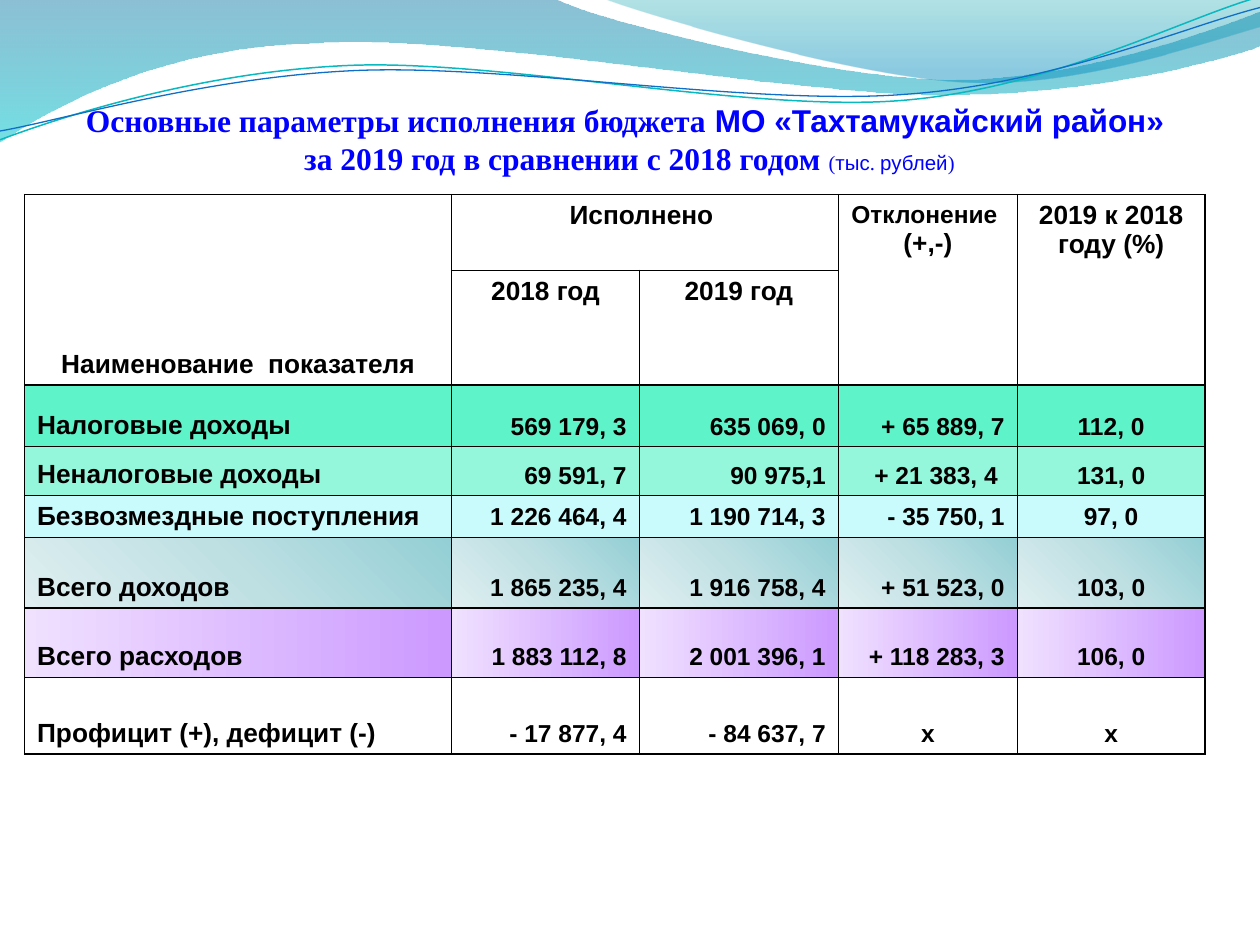
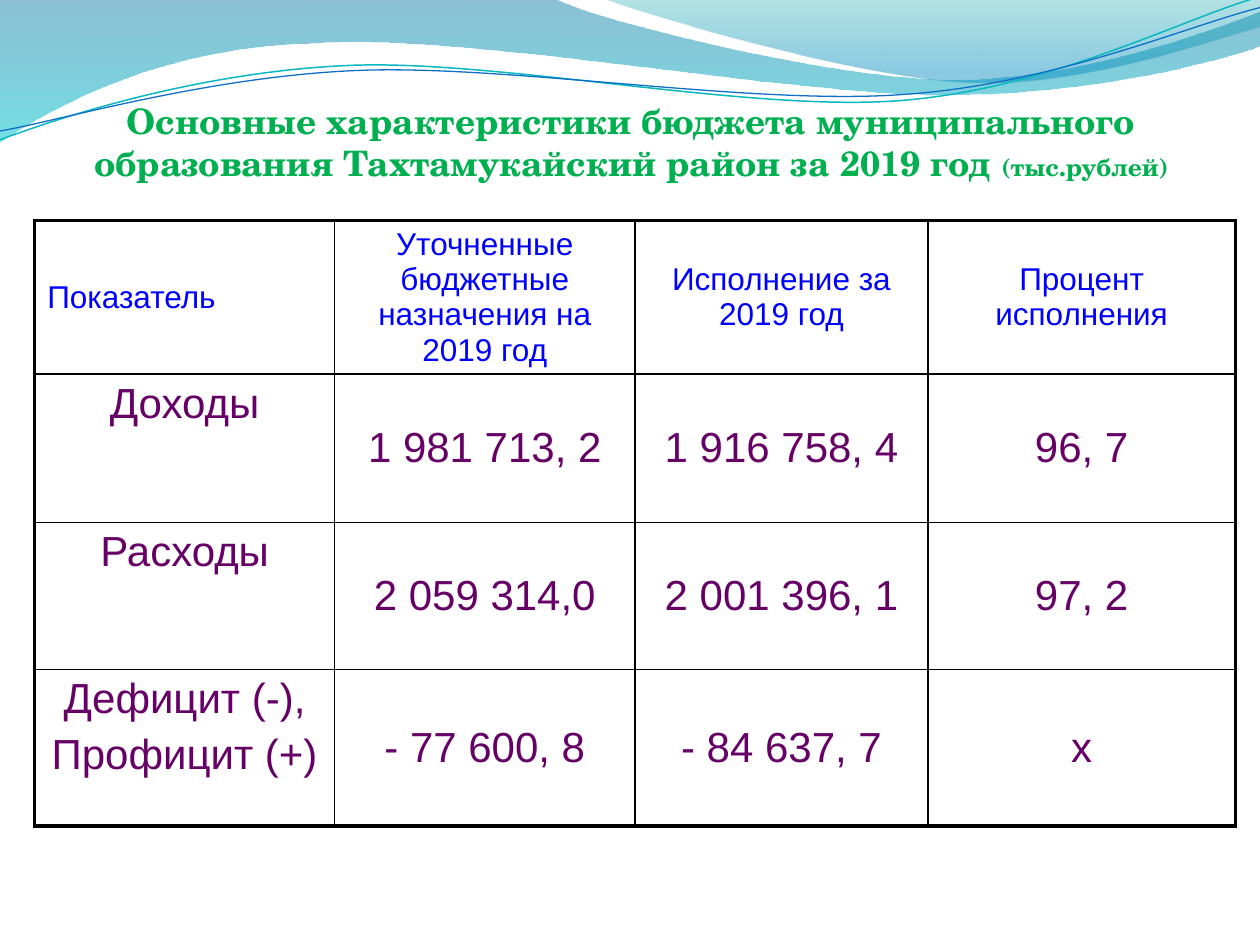
from lxml import etree
from pptx import Presentation
from pptx.dml.color import RGBColor
from pptx.enum.text import MSO_ANCHOR, MSO_AUTO_SIZE, PP_ALIGN
from pptx.oxml.ns import qn
from pptx.util import Inches, Pt

LEFT, CENTER, RIGHT = PP_ALIGN.LEFT, PP_ALIGN.CENTER, PP_ALIGN.RIGHT
TOP, MIDDLE, BOTTOM = MSO_ANCHOR.TOP, MSO_ANCHOR.MIDDLE, MSO_ANCHOR.BOTTOM
NO_AUTO_SIZE = MSO_AUTO_SIZE.NONE

BLACK = RGBColor(0x00, 0x00, 0x00)
BLUE = RGBColor(0x00, 0x00, 0xFF)
GREEN = RGBColor(0x00, 0xB0, 0x50)
PURPLE = RGBColor(0x66, 0x00, 0x66)
DEEP_BLUE = RGBColor(0x00, 0x74, 0xA1)
CYAN = RGBColor(0x00, 0xC6, 0xCF)
TEAL = RGBColor(0x00, 0xA1, 0xA9)
SEA_BLUE = RGBColor(0x00, 0x8B, 0xBF)
TEAL_LINE = RGBColor(0x0A, 0xB8, 0xBF)
BLUE_LINE = RGBColor(0x0F, 0x6F, 0xC6)
MINT = RGBColor(0x5F, 0xF3, 0xCA)
LIGHT_MINT = RGBColor(0x94, 0xF7, 0xDC)
ICE = RGBColor(0xC9, 0xFA, 0xFC)
GREY_TEAL = RGBColor(0x93, 0xCF, 0xD5)
PALE_TEAL = RGBColor(0xBF, 0xE0, 0xE3)
MIST = RGBColor(0xE0, 0xEF, 0xF1)
PALE_LILAC = RGBColor(0xF0, 0xE1, 0xFF)
LILAC = RGBColor(0xCC, 0x99, 0xFF)

SANS, SERIF, SCHOOL = "Arial", "Times New Roman", "TeX Gyre Schola"
GRID_COLUMNS, GRID_ROWS = 100, 75

# Each wave is a start point and segments in grid units:
# one point for a straight line, two controls and an end for a curve.
BAND_START = (0, 0)
BAND_SEGMENTS = [((44, -0.1),),
                 ((47.6, 1.7), (66.4, 6.3), (75.8, 6.3)),
                 ((85.3, 6.3), (95.8, 2.6), (100, 0.9)),
                 ((100.1, 3.6),),
                 ((98.3, 4.4), (87, 7.6), (74.6, 7.5)),
                 ((62.2, 7.5), (38.2, 2.8), (25.7, 3.4)),
                 ((12.9, 3.6), (4.6, 8.3), (-0.1, 11.3))]
CORNER_START = (47.9, -0.1)
CORNER_SEGMENTS = [((50.9, 1.1), (68.2, 6.2), (76.9, 6.5)),
                   ((85.6, 6.9), (96.1, 3.2), (100, 2.1)),
                   ((100, 0),)]
TEAL_START = (0, 11.1)
TEAL_SEGMENTS = [((4.8, 9.3), (15.8, 5.7), (27.7, 5.2)),
                 ((39.5, 4.7), (59.3, 8.9), (71.3, 8)),
                 ((83.3, 7.1), (93.8, 1.5), (99.8, -0.2))]
BLUE_START = (0, 10.4)
BLUE_SEGMENTS = [((4.7, 9.6), (16.4, 6.1), (28.3, 5.6)),
                 ((40.3, 5.1), (59.7, 8.4), (71.7, 7.5)),
                 ((83.6, 6.7), (94.1, 2.1), (100, 0.6))]


def bend_lines(shape, segments):
    """Turn the three straight lines that stand for a curve into that curve."""
    lines = iter(list(shape._element.iter(qn("a:lnTo"))))
    for segment in segments:
        group = [next(lines) for _ in segment]
        if len(group) == 3:
            curve = etree.Element(qn("a:cubicBezTo"))
            group[0].addprevious(curve)
            for line in group:
                curve.append(line[0])
                line.getparent().remove(line)


def gradient(stops, angle=None):
    """Build a gradFill; without an angle it spreads from the top right corner."""
    element = etree.Element(qn("a:gradFill"), rotWithShape="1")
    stop_list = etree.SubElement(element, qn("a:gsLst"))
    for position, color, opacity in stops:
        stop = etree.SubElement(stop_list, qn("a:gs"), pos=str(position * 1000))
        value = etree.SubElement(stop, qn("a:srgbClr"), val=str(color))
        if opacity < 100:
            etree.SubElement(value, qn("a:alpha"), val=str(opacity * 1000))
    if angle is None:
        spread = etree.SubElement(element, qn("a:path"), {"path": "circle"})
        etree.SubElement(spread, qn("a:fillToRect"), l="100000", b="100000")
    else:
        etree.SubElement(element, qn("a:lin"), ang=str(angle * 60000), scaled="0")
    return element


def apply_fill(fill, properties, paint):
    """Fill with nothing, a colour or a tuple of gradient arguments."""
    fill.background()
    if isinstance(paint, RGBColor):
        fill.solid()
        fill.fore_color.rgb = paint
    elif paint:
        properties.replace(properties.find(qn("a:noFill")), gradient(*paint))


def write_text(frame, paragraphs, *, size=14, font=SANS, color=BLACK, bold=False,
               align=LEFT, space_before=0):
    """Write paragraphs; each is a string or a list of (text, overrides) runs."""
    for index, content in enumerate(paragraphs):
        paragraph = frame.add_paragraph() if index else frame.paragraphs[0]
        paragraph.alignment = align
        paragraph.space_before = Pt(space_before)
        for text, changes in [(content, {})] if isinstance(content, str) else content:
            if text == "\n":
                paragraph.add_line_break()
                continue
            run = paragraph.add_run()
            run.text = text
            run.font.size = Pt(changes.get("size", size))
            run.font.name = changes.get("font", font)
            run.font.bold = changes.get("bold", bold)
            run.font.color.rgb = color


def set_borders(cell, widths):
    properties = cell._tc.get_or_add_tcPr()
    for index, (side, width) in enumerate(zip("LRTB", widths)):
        line = etree.Element(qn(f"a:ln{side}"), w=str(Pt(width)))
        solid = etree.SubElement(line, qn("a:solidFill"))
        etree.SubElement(solid, qn("a:srgbClr"), val=str(BLACK))
        properties.insert(index, line)


class Deck:
    """Holds the shared style and the current slide."""

    def __init__(self):
        self.presentation = Presentation()
        self.presentation.slide_width = Inches(10)
        self.presentation.slide_height = Inches(7.5)
        self.layout = self.presentation.slide_layouts[5]
        self.slide = None

    def across(self, columns):
        return round(self.presentation.slide_width * columns / GRID_COLUMNS)

    def down(self, rows):
        return round(self.presentation.slide_height * rows / GRID_ROWS)

    def box(self, left, top, width, height):
        return self.across(left), self.down(top), self.across(width), self.down(height)

    def add_slide(self):
        self.slide = self.presentation.slides.add_slide(self.layout)

    def wave(self, start, segments, paint=None, line=None, width=0):
        """Draw a wave on the slide, filled if it has paint, and return it."""
        builder = self.slide.shapes.build_freeform(self.across(start[0]), self.down(start[1]))
        builder.add_line_segments([(self.across(x), self.down(y))
                                   for segment in segments for x, y in segment],
                                  close=paint is not None)
        shape = builder.convert_to_shape()
        bend_lines(shape, segments)
        shape.shadow.inherit = False
        apply_fill(shape.fill, shape._element.spPr, paint)
        if line:
            shape.line.color.rgb = line
            shape.line.width = Pt(width)
        else:
            shape.line.fill.background()
        return shape

    def share_waves(self):
        """Draw the waves once and hand them to the layout."""
        waves = [
            self.wave(BAND_START, BAND_SEGMENTS,
                      ([(0, DEEP_BLUE, 45), (100, CYAN, 55)], 90)),
            self.wave(CORNER_START, CORNER_SEGMENTS,
                      ([(0, TEAL, 30), (80, SEA_BLUE, 45)], 90)),
            self.wave(TEAL_START, TEAL_SEGMENTS, line=TEAL_LINE, width=0.85),
            self.wave(BLUE_START, BLUE_SEGMENTS, line=BLUE_LINE, width=0.75),
        ]
        for number, shape in enumerate(waves, start=101):
            shape._element.nvSpPr.cNvPr.set("id", str(number))
            self.layout.shapes._spTree.append(shape._element)

    def title(self, place, runs, bottom_inset=0, **style):
        shape = self.slide.shapes.title
        shape.left, shape.top, shape.width, shape.height = self.box(*place)
        frame = shape.text_frame
        frame.word_wrap = True
        frame.auto_size = NO_AUTO_SIZE
        frame.vertical_anchor = BOTTOM
        frame.margin_left = frame.margin_right = 0
        frame.margin_top, frame.margin_bottom = Inches(0.05), self.down(bottom_inset)
        write_text(frame, [runs], bold=True, align=CENTER, **style)

    def table(self, left, top, columns, rows, outline=1):
        shape = self.slide.shapes.add_table(
            len(rows), len(columns), *self.box(left, top, sum(columns), sum(rows)))
        table = shape.table
        table.first_row = table.horz_banding = False
        for column, width in zip(table.columns, columns):
            column.width = self.across(width)
        for row, height in zip(table.rows, rows):
            row.height = self.down(height)
        last_row, last_column = len(rows) - 1, len(columns) - 1
        for r in range(len(rows)):
            for c in range(len(columns)):
                cell = table.cell(r, c)
                cell.fill.background()
                edges = (c == 0, c == last_column, r == 0, r == last_row)
                set_borders(cell, [outline if edge else 1 for edge in edges])
        return table

    def cell(self, table, row, column, paragraphs, anchor=TOP, paint=None, **style):
        cell = table.cell(row, column)
        cell.vertical_anchor = anchor
        apply_fill(cell.fill, cell._tc.get_or_add_tcPr(), paint)
        write_text(cell.text_frame, paragraphs, **style)


def add_comparison(deck):
    small = {"size": 11.7, "bold": False}
    deck.title((4.2, 7.6, 91.5, 8.5), [
        ("Основные параметры исполнения бюджета", {}),
        (" МО «Тахтамукайский район» ", {"font": SANS}),
        ("\n", {}),
        ("за 2019 год в сравнении с 2018 годом ", {}),
        ("(", small), ("тыс", {**small, "font": SANS}), (". ", small),
        ("рублей", {**small, "font": SANS}), (")", small),
    ], bottom_inset=2.05, size=18, font=SERIF, color=BLUE)

    table = deck.table(1.95, 15.45, [33.9, 14.9, 15.8, 14.2, 14.9],
                       [6, 9.1, 4.9, 3.9, 2.8, 5.6, 5.5, 6.1])
    for column in (0, 3, 4):
        table.cell(0, column).merge(table.cell(1, column))
    table.cell(0, 1).merge(table.cell(0, 2))
    headings = [(0, 0, ["Наименование  показателя"], BOTTOM),
                (0, 1, ["Исполнено "], TOP),
                (0, 3, [[("Отклонение ", {"size": 14})], "(+,-)"], TOP),
                (0, 4, ["2019 к 2018 году (%)"], TOP),
                (1, 1, ["2018 год"], TOP),
                (1, 2, ["2019 год"], TOP)]
    for row, column, paragraphs, anchor in headings:
        deck.cell(table, row, column, paragraphs, anchor, size=15, bold=True, align=CENTER)

    income_total = ([(0, GREY_TEAL, 100), (50, PALE_TEAL, 100), (100, MIST, 100)],)
    expense_total = ([(0, PALE_LILAC, 100), (100, LILAC, 100)], 0)
    lines = [
        (MINT, "Налоговые доходы", "569 179, 3", "635 069, 0", "+ 65 889, 7", "112, 0"),
        (LIGHT_MINT, "Неналоговые доходы", "69 591, 7", "90 975,1", "+ 21 383, 4 ", "131, 0"),
        (ICE, "Безвозмездные поступления", "1 226 464, 4", "1 190 714, 3", "- 35 750, 1", "97, 0"),
        (income_total, "Всего доходов", "1 865 235, 4", "1 916 758, 4", "+ 51 523, 0", "103, 0"),
        (expense_total, "Всего расходов", "1 883 112, 8", "2 001 396, 1", "+ 118 283, 3", "106, 0"),
        (None, "Профицит (+), дефицит (-)", "- 17 877, 4", "- 84 637, 7", "х", "х"),
    ]
    for row, (paint, *texts) in enumerate(lines, start=2):
        for column, text in enumerate(texts):
            align = CENTER if column == 4 or text == "х" else RIGHT if column else LEFT
            deck.cell(table, row, column, [text], BOTTOM, paint,
                      size=14 if column else 15, bold=True, align=align)


def add_characteristics(deck):
    deck.title((5.1, 2.1, 90, 12.5), [
        ("Основные характеристики бюджета муниципального образования "
         "Тахтамукайский район за 2019 год ", {}),
        ("(тыс.рублей)", {"size": 14}),
    ], size=20, font=SCHOOL, color=GREEN)

    table = deck.table(2.75, 17.5, [23.8, 23.85, 23.25, 24.4], [11.7, 11.75, 11.7, 12.4],
                       outline=2.25)
    headings = ["Показатель", "Уточненные бюджетные назначения на 2019 год",
                "Исполнение за 2019 год", "Процент исполнения"]
    for column, text in enumerate(headings):
        deck.cell(table, 0, column, [text], MIDDLE, size=18, color=BLUE,
                  align=CENTER if column else LEFT, space_before=3.6)
    lines = [(["Доходы"], "1 981 713, 2", "1 916 758, 4", "96, 7"),
             (["Расходы"], "2 059 314,0", "2 001 396, 1", "97, 2"),
             (["Дефицит (-),", "Профицит (+)"], "- 77 600, 8", "- 84 637, 7", "х")]
    for row, (names, *values) in enumerate(lines, start=1):
        for column, paragraphs in enumerate([names] + [[value] for value in values]):
            deck.cell(table, row, column, paragraphs, MIDDLE if column else TOP,
                      size=24, color=PURPLE, align=CENTER, space_before=4.8)


def main():
    deck = Deck()
    deck.add_slide()
    deck.share_waves()
    add_comparison(deck)
    deck.add_slide()
    add_characteristics(deck)
    deck.presentation.save("out.pptx")


if __name__ == "__main__":
    main()
